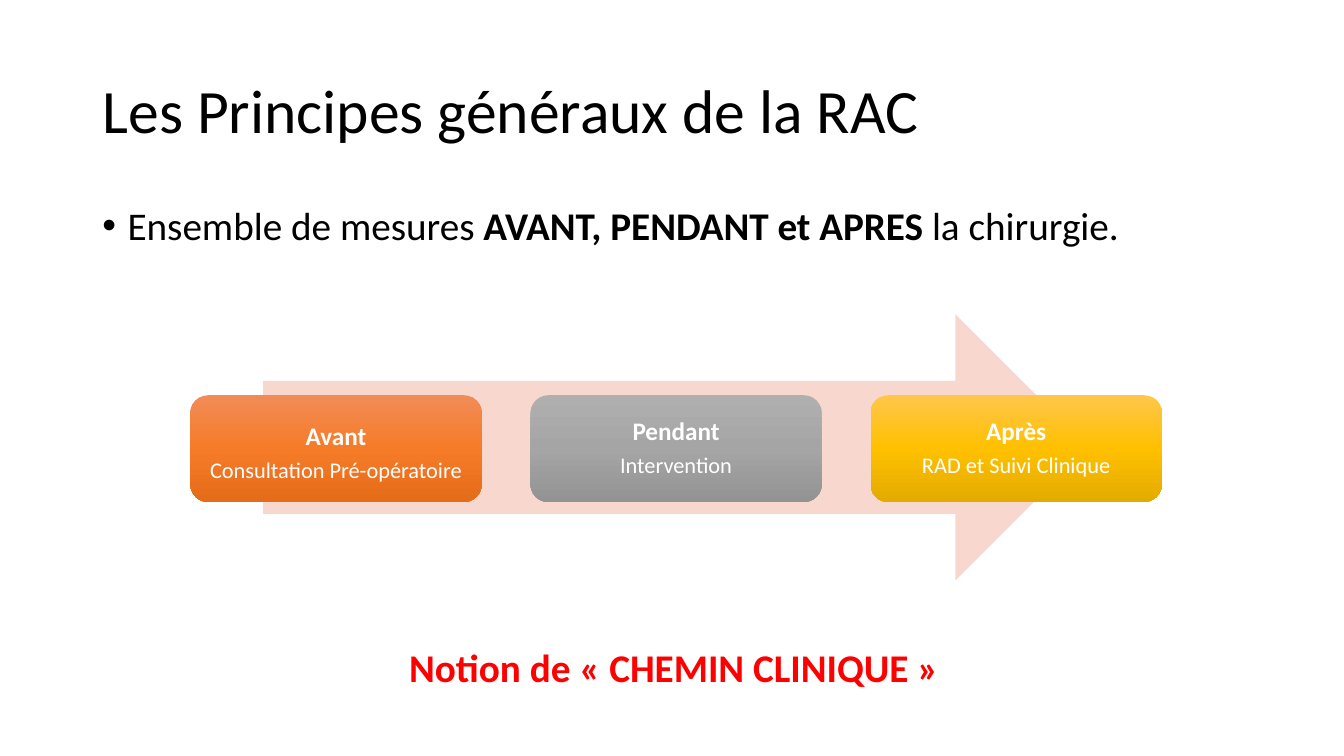
from copy import deepcopy

from pptx import Presentation
from pptx.dml.color import RGBColor
from pptx.enum.shapes import MSO_SHAPE
from pptx.enum.text import MSO_ANCHOR, PP_ALIGN
from pptx.oxml.ns import qn
from pptx.util import Cm, Pt
from lxml.etree import SubElement

FONT = "Calibri"
STAGES = [
    ("Avant", "Consultation Pré-opératoire", ("F18C57", "F67B28", "E56C19"), 0.25),
    ("Pendant", "Intervention", ("AFAFAF", "A5A5A5", "939393"), 0),
    ("Après", "RAD et Suivi Clinique", ("FFC64B", "FFC000", "E3AB00"), 0),
]


def paint(target, code):
    target.rgb = RGBColor.from_string(code)


def write(par, text, size=28, color="000000", bold=False,
          align=PP_ALIGN.LEFT, line=0.9, after=0):
    """Add a formatted run to a paragraph."""
    par.alignment = align
    par.line_spacing = line
    par.space_before = Pt(0)
    par.space_after = Pt(after)
    run = par.add_run()
    run.text = text
    font = run.font
    font.name, font.size, font.bold = FONT, Pt(size), bold
    paint(font.color, color)


def add_box(slide, left, top, width, height):
    box = slide.shapes.add_textbox(Cm(left), Cm(top), Cm(width), Cm(height))
    box.text_frame.word_wrap = True
    return box.text_frame.paragraphs[0]


def add_bullet(par):
    props = par._p.get_or_add_pPr()
    indent = Cm(0.635)
    props.set("marL", str(indent))
    props.set("indent", str(-indent))
    SubElement(props, qn("a:buFont")).set("typeface", "Arial")
    SubElement(props, qn("a:buChar")).set("char", "•")


def add_shape(slide, kind, left, top, width, height):
    shape = slide.shapes.add_shape(kind, Cm(left), Cm(top), Cm(width), Cm(height))
    shape.shadow.inherit = False
    shape.line.fill.background()
    return shape


def shade(shape, codes):
    """Fill a shape with a top-to-bottom gradient of three colours."""
    fill = shape.fill
    fill.gradient()
    fill.gradient_angle = 270
    stops = shape.element.spPr.find(".//" + qn("a:gsLst"))
    stops.append(deepcopy(stops[0]))
    for i, (stop, code) in enumerate(zip(fill.gradient_stops, codes)):
        stop.position = i / 2
        paint(stop.color, code)


def add_card(slide, left, head, detail, codes, drop):
    """Add a stage card; drop lowers its text."""
    card = add_shape(slide, MSO_SHAPE.ROUNDED_RECTANGLE, left, 9.96, 7.34, 2.69)
    shade(card, codes)
    frame = card.text_frame
    frame.word_wrap = True
    frame.vertical_anchor = MSO_ANCHOR.MIDDLE
    frame.margin_left = frame.margin_right = frame.margin_bottom = Cm(0.3)
    frame.margin_top = Cm(0.3 + drop)
    style = dict(color="FFFFFF", align=PP_ALIGN.CENTER, after=6)
    write(frame.paragraphs[0], head, size=18, bold=True, **style)
    write(frame.add_paragraph(), detail, size=16, **style)


def add_title(slide, text):
    title = slide.shapes.title
    title.left, title.top = Cm(2.33), Cm(1.02)
    title.width, title.height = Cm(29.21), Cm(3.68)
    title.text_frame.vertical_anchor = MSO_ANCHOR.MIDDLE
    write(title.text_frame.paragraphs[0], text, size=44)


def main():
    deck = Presentation()
    deck.slide_width, deck.slide_height = Cm(33.87), Cm(19.05)
    slide = deck.slides.add_slide(deck.slide_layouts[5])
    add_title(slide, "Les Principes généraux de la RAC")

    intro = add_box(slide, 2.33, 5.08, 29.21, 12.09)
    add_bullet(intro)
    write(intro, "Ensemble de mesures ")
    write(intro, "AVANT, PENDANT et APRES", bold=True)
    write(intro, " la chirurgie.")

    arrow = add_shape(slide, MSO_SHAPE.RIGHT_ARROW, 6.63, 7.92, 20.8, 6.71)
    arrow.fill.solid()
    paint(arrow.fill.fore_color, "F8D7CE")
    for i, stage in enumerate(STAGES):
        add_card(slide, 4.8 + 8.57 * i, *stage)

    note = add_box(slide, 8.05, 16.08, 17.86, 1.45)
    write(note, "Notion de « CHEMIN CLINIQUE »", color="FF0000", bold=True,
          align=PP_ALIGN.CENTER, line=1.0)
    deck.save("out.pptx")


if __name__ == "__main__":
    main()
